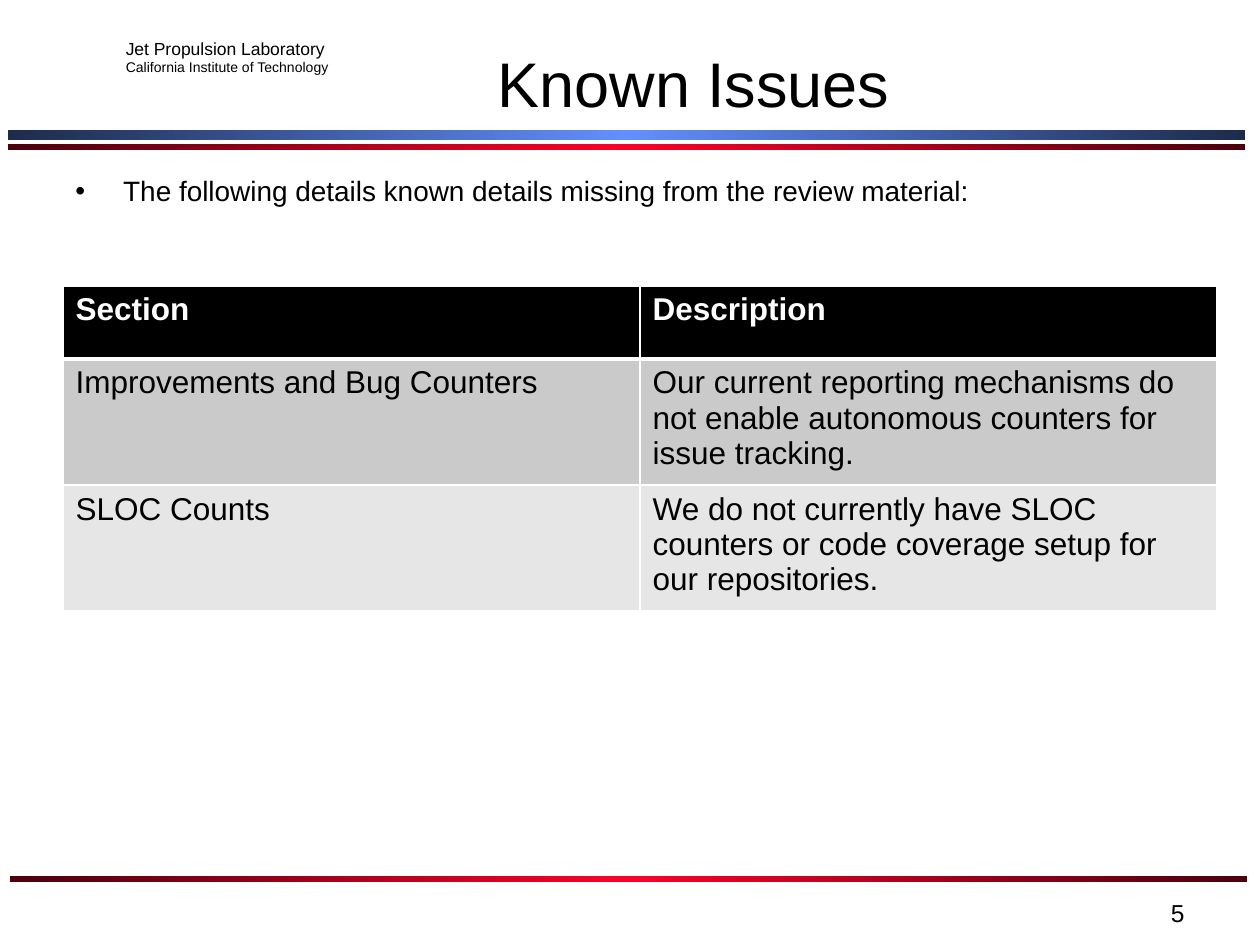
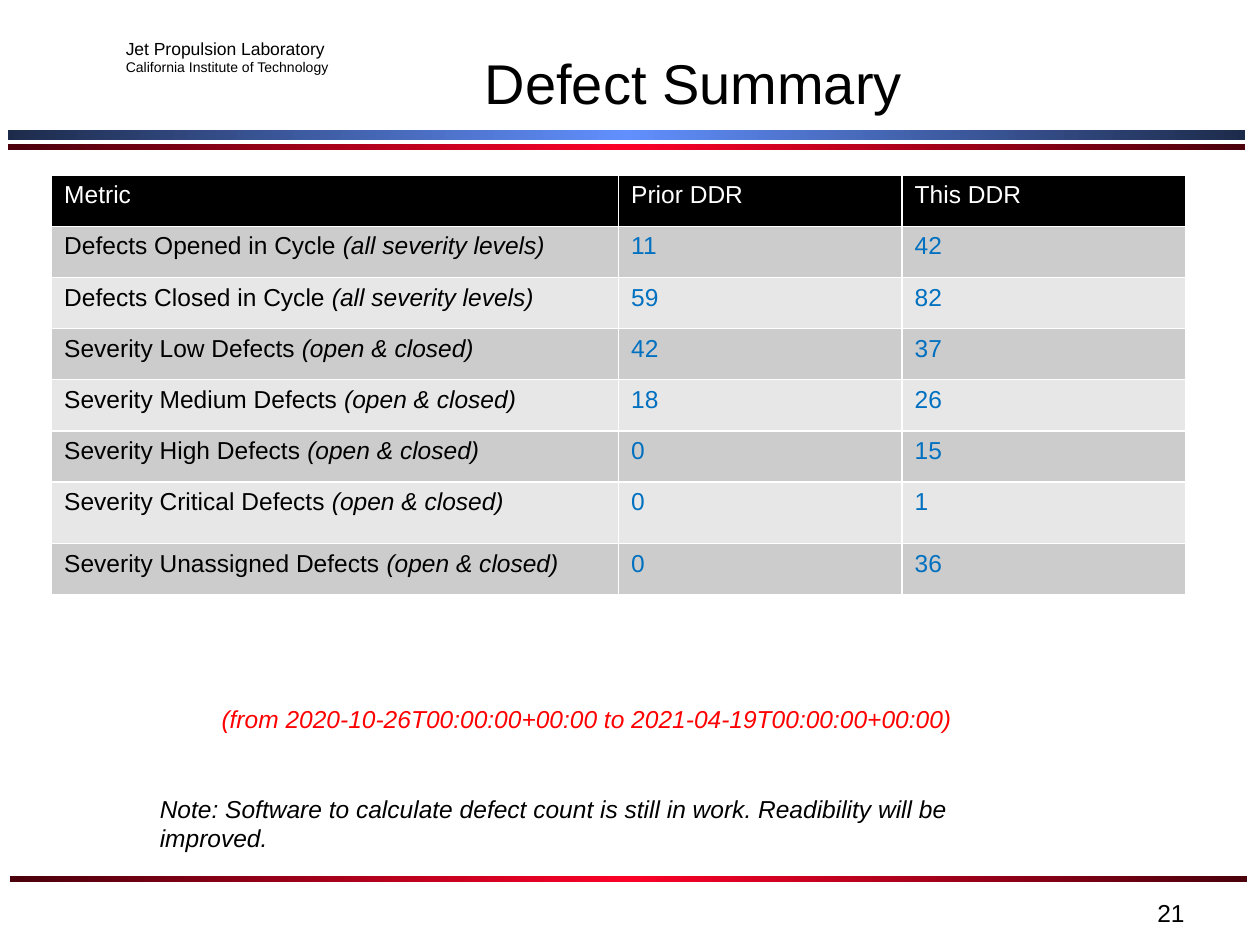
"""Build two review slides, Known Issues and Defect Summary, on a shared layout."""
from copy import deepcopy
from dataclasses import dataclass
from typing import NamedTuple

from lxml.etree import SubElement
from pptx import Presentation
from pptx.dml.color import RGBColor
from pptx.enum.shapes import MSO_SHAPE
from pptx.enum.text import MSO_ANCHOR, PP_ALIGN
from pptx.oxml.ns import qn
from pptx.util import Inches, Pt

LEFT, CENTER, RIGHT = PP_ALIGN.LEFT, PP_ALIGN.CENTER, PP_ALIGN.RIGHT
TOP, MIDDLE, BOTTOM = MSO_ANCHOR.TOP, MSO_ANCHOR.MIDDLE, MSO_ANCHOR.BOTTOM
RECTANGLE = MSO_SHAPE.RECTANGLE
BLANK_LAYOUT = 6
COLUMNS = 100
SLIDE_WIDTH, SLIDE_HEIGHT = Inches(10), Inches(7.5)


@dataclass(frozen=True)
class Theme:
    """Colours, font and type sizes of the deck."""
    font: str = "Arial"
    ink: str = "000000"
    paper: str = "FFFFFF"
    alert: str = "FF0000"
    figure: str = "0070C0"
    blue: tuple[str, str] = ("1D2B4B", "618FFD")
    red: tuple[str, str] = ("4B000C", "FC0128")
    issue_bands: tuple[str, str] = ("CACACA", "E6E6E6")
    defect_bands: tuple[str, str] = ("CCCCCC", "E7E7E7")
    title: int = 36
    long_title: int = 32
    table: int = 18
    body: int = 16
    small: int = 14
    lab: int = 10
    institute: int = 8


THEME = Theme()


class Frame(NamedTuple):
    """A place on the grid, in square cells of a hundredth of the slide width."""
    left: float
    top: float
    width: float
    height: float

    def box(self) -> list[int]:
        """Return the frame in slide units."""
        return [cells(value) for value in self]


class Run(NamedTuple):
    """A stretch of text, upright or italic."""
    text: str
    italic: bool = False


@dataclass(frozen=True)
class Line:
    """One paragraph with its type style."""
    runs: tuple[Run, ...]
    size: int
    color: str = THEME.ink
    bold: bool = False
    align: PP_ALIGN = LEFT
    bullet: bool = False


@dataclass(frozen=True)
class Label:
    """A text box of one or more lines."""
    frame: Frame
    lines: tuple[Line, ...]
    anchor: MSO_ANCHOR = TOP
    wrap: bool = True


@dataclass(frozen=True)
class Stripe:
    """A bar shaded from dark ends to a bright middle."""
    frame: Frame
    shades: tuple[str, str]


@dataclass(frozen=True)
class Grid:
    """A table with a black header and alternating bands."""
    left: float
    top: float
    columns: tuple[float, ...]
    rows: tuple[float, ...]
    cells: tuple[tuple[Line, ...], ...]
    bands: tuple[str, str]
    header_rule: float


STRIPES = (
    Stripe(Frame(0.6, 10.3, 98.2, 0.8), THEME.blue),
    Stripe(Frame(0.6, 11.4, 98.2, 0.5), THEME.red),
    Stripe(Frame(0.8, 69.5, 98.2, 0.5), THEME.red),
)
LETTERHEAD = Label(Frame(9, 2.5, 18.5, 4), (
    Line((Run("Jet Propulsion Laboratory"),), THEME.lab),
    Line((Run("California Institute of Technology"),), THEME.institute),
))
TITLE_FRAME = Frame(26.7, 3, 56.7, 7)
NUMBER_FRAME = Frame(71.7, 70.8, 23.3, 2.7)

ISSUES = (
    ("Improvements and Bug Counters",
     "Our current reporting mechanisms do not enable autonomous counters for issue tracking."),
    ("SLOC Counts",
     "We do not currently have SLOC counters or code coverage setup for our repositories."),
)
ALL_LEVELS, OPEN_CLOSED = "(all severity levels)", "(open & closed)"
DEFECTS = (
    ("Defects Opened in Cycle", ALL_LEVELS, 11, 42),
    ("Defects Closed in Cycle", ALL_LEVELS, 59, 82),
    ("Severity Low Defects", OPEN_CLOSED, 42, 37),
    ("Severity Medium Defects", OPEN_CLOSED, 18, 26),
    ("Severity High Defects", OPEN_CLOSED, 0, 15),
    ("Severity Critical Defects", OPEN_CLOSED, 0, 1),
    ("Severity Unassigned Defects", OPEN_CLOSED, 0, 36),
)


def cells(count: float) -> int:
    """Convert grid cells to slide units."""
    return round(SLIDE_WIDTH * count / COLUMNS)


def rgb(color: str) -> RGBColor:
    """Convert a hex colour."""
    return RGBColor.from_string(color)


def write_line(paragraph, line: Line) -> None:
    """Fill a paragraph with a styled line."""
    paragraph.alignment = line.align
    if line.bullet:
        properties = paragraph._p.get_or_add_pPr()
        indent = cells(3.8)
        properties.set("marL", str(indent))
        properties.set("indent", str(-indent))
        SubElement(properties, qn("a:buFont")).set("typeface", THEME.font)
        SubElement(properties, qn("a:buChar")).set("char", "•")
    font = paragraph.font
    font.name, font.size, font.bold = THEME.font, Pt(line.size), line.bold
    font.color.rgb = rgb(line.color)
    mixed = len({run.italic for run in line.runs}) > 1
    if not mixed:
        font.italic = line.runs[0].italic
    for part in line.runs:
        run = paragraph.add_run()
        run.text = part.text
        if mixed:
            run.font.italic = part.italic


def draw_label(slide, label: Label) -> None:
    """Draw a text box."""
    text = slide.shapes.add_textbox(*label.frame.box()).text_frame
    text.word_wrap, text.vertical_anchor = label.wrap, label.anchor
    for index, line in enumerate(label.lines):
        write_line(text.add_paragraph() if index else text.paragraphs[0], line)


def draw_stripe(slide, stripe: Stripe) -> None:
    """Draw a bar with a three-stop gradient."""
    bar = slide.shapes.add_shape(RECTANGLE, *stripe.frame.box())
    bar.shadow.inherit = False
    bar.line.fill.background()
    bar.fill.gradient()
    bar.fill.gradient_angle = 0
    for stop, color, position in zip(bar.fill.gradient_stops, stripe.shades, (0, 0.5)):
        stop.color.rgb, stop.position = rgb(color), position
    stops = bar._element.spPr.find(".//" + qn("a:gsLst"))
    far_end = deepcopy(stops[0])
    far_end.set("pos", "100000")
    stops.append(far_end)


def rule_cell(cell, top: float, bottom: float) -> None:
    """Give a cell white borders."""
    properties = cell._tc.get_or_add_tcPr()
    for index, (side, width) in enumerate((("L", 1), ("R", 1), ("T", top), ("B", bottom))):
        border = properties.makeelement(qn(f"a:ln{side}"), {"w": str(Pt(width))})
        fill = SubElement(border, qn("a:solidFill"))
        SubElement(fill, qn("a:srgbClr")).set("val", THEME.paper)
        properties.insert(index, border)


def draw_grid(slide, grid: Grid) -> None:
    """Draw a banded table."""
    frame = Frame(grid.left, grid.top, sum(grid.columns), sum(grid.rows))
    table = slide.shapes.add_table(len(grid.rows), len(grid.columns), *frame.box()).table
    table.horz_banding = False
    for column, width in zip(table.columns, grid.columns):
        column.width = cells(width)
    for row_index, (height, lines) in enumerate(zip(grid.rows, grid.cells)):
        table.rows[row_index].height = cells(height)
        band = grid.bands[(row_index - 1) % 2] if row_index else THEME.ink
        for column_index, line in enumerate(lines):
            cell = table.cell(row_index, column_index)
            cell.fill.solid()
            cell.fill.fore_color.rgb = rgb(band)
            rule_cell(cell, grid.header_rule if row_index == 1 else 1,
                      1 if row_index else grid.header_rule)
            write_line(cell.text_frame.paragraphs[0], line)


def header(names: tuple[str, ...], size: int, bold: bool) -> tuple[Line, ...]:
    """Return the white header cells of a table."""
    return tuple(Line((Run(name),), size, THEME.paper, bold) for name in names)


def start_slide(deck, title: str, size: int, anchor: MSO_ANCHOR, number: int):
    """Add a slide with stripes, letterhead, title and number."""
    slide = deck.slides.add_slide(deck.slide_layouts[BLANK_LAYOUT])
    for stripe in STRIPES:
        draw_stripe(slide, stripe)
    draw_label(slide, LETTERHEAD)
    draw_label(slide, Label(TITLE_FRAME, (Line((Run(title),), size, align=CENTER),), anchor))
    draw_label(slide, Label(
        NUMBER_FRAME, (Line((Run(str(number)),), THEME.small, align=RIGHT),)))
    return slide


def build_known_issues(deck) -> None:
    """Build the slide of missing review details."""
    slide = start_slide(deck, "Known Issues", THEME.title, BOTTOM, 5)
    intro = Run("The following details known details missing from the review material:")
    draw_label(slide, Label(Frame(5, 13.3, 90, 53.7), (
        Line((intro,), THEME.body, bullet=True),)))
    issues = tuple(tuple(Line((Run(text),), THEME.table) for text in issue) for issue in ISSUES)
    draw_grid(slide, Grid(
        5, 22.7, (45.8,) * 2, (5.8,) * 3,
        (header(("Section", "Description"), THEME.table, True), *issues),
        THEME.issue_bands, header_rule=3))


def build_defect_summary(deck) -> None:
    """Build the slide of defect counts."""
    slide = start_slide(deck, "Defect Summary", THEME.long_title, MIDDLE, 21)
    defects = tuple(
        (Line((Run(f"{metric} "), Run(scope, True)), THEME.small),
         *(Line((Run(str(count)),), THEME.small, THEME.figure) for count in counts))
        for metric, scope, *counts in DEFECTS)
    draw_grid(slide, Grid(
        4.1, 13.9, (45, 22.5, 22.5), (4.06,) * 6 + (4.9, 4.06),
        (header(("Metric", "Prior DDR", "This DDR"), THEME.small, False), *defects),
        THEME.defect_bands, header_rule=1))
    period = Run("(from 2020-10-26T00:00:00+00:00 to 2021-04-19T00:00:00+00:00)", True)
    draw_label(slide, Label(Frame(16.6, 55.4, 60.1, 3.4), (
        Line((period,), THEME.small, THEME.alert),), wrap=False))
    note = Run("Note: Software to calculate defect count is still in work. "
               "Readibility will be improved.", True)
    draw_label(slide, Label(Frame(11.7, 62.5, 73.4, 3.4), (Line((note,), THEME.small),)))


def main() -> None:
    """Build and save the deck."""
    deck = Presentation()
    deck.slide_width, deck.slide_height = SLIDE_WIDTH, SLIDE_HEIGHT
    build_known_issues(deck)
    build_defect_summary(deck)
    deck.save("out.pptx")


if __name__ == "__main__":
    main()
